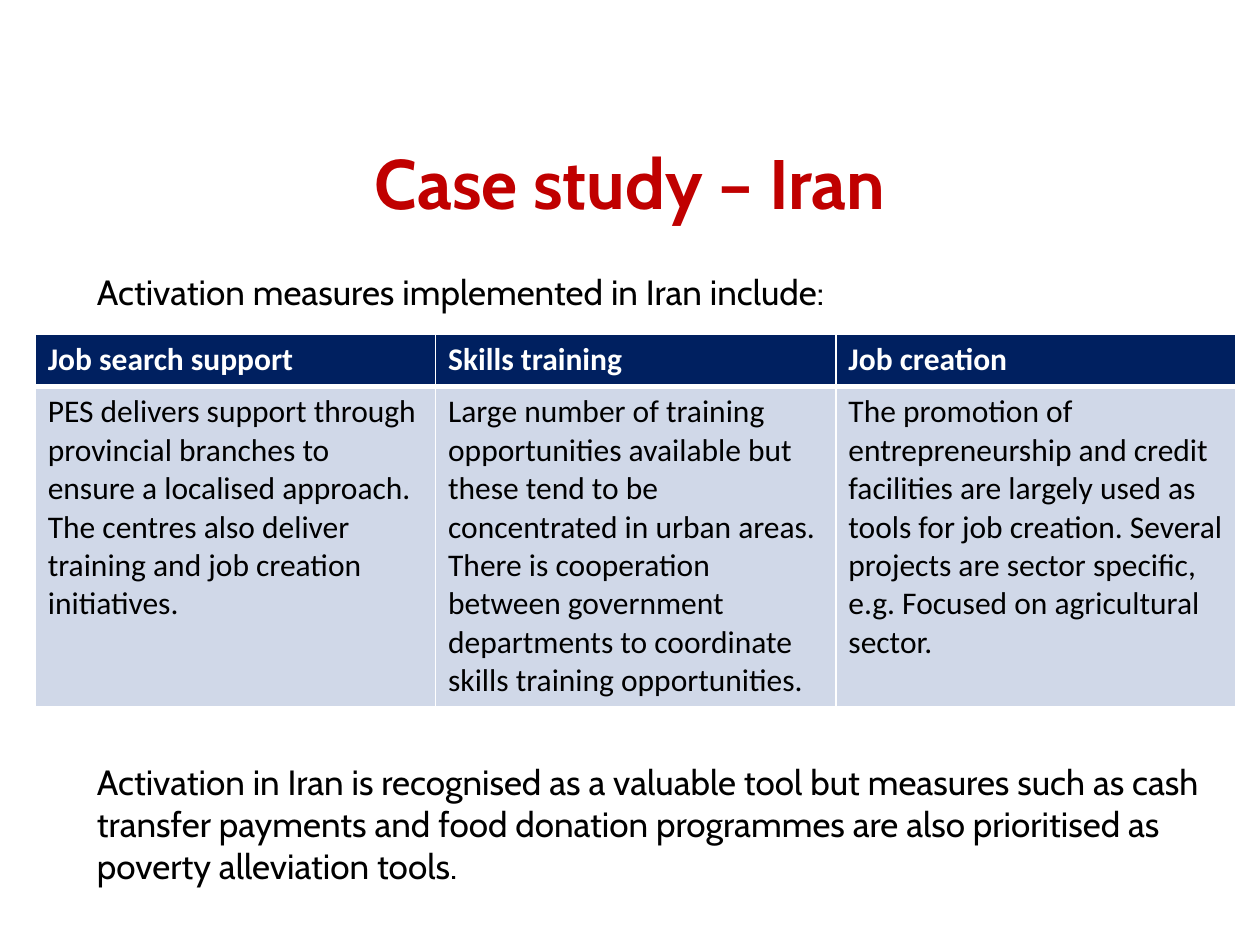
from pptx import Presentation
from pptx.dml.color import RGBColor
from pptx.enum.text import MSO_ANCHOR as Anchor, MSO_AUTO_SIZE as Fit, PP_ALIGN as Align
from pptx.oxml.ns import qn
from pptx.util import Cm, Pt
from lxml.etree import SubElement as Sub

HEADS = ["Job search support", "Skills training", "Job creation"]
CELLS = [
    "PES delivers support through provincial branches to ensure a localised approach. "
    "The centres also deliver training and job creation initiatives.",
    "Large number of training opportunities available but these tend to be concentrated "
    "in urban areas. There is cooperation between government departments to coordinate "
    "skills training opportunities.",
    "The promotion of entrepreneurship and credit facilities are largely used as tools for "
    "job creation. Several projects are sector specific, e.g. Focused on agricultural sector.",
]
INTRO = "Activation measures implemented in Iran include:"
CLOSE = ("Activation in Iran is recognised as a valuable tool but measures such as cash transfer "
         "payments and food donation programmes are also prioritised as poverty alleviation tools.")


def color(code):
    return RGBColor.from_string(code)


class Deck:
    """Holds the style and the current slide, and adds each kind of element."""

    red, navy, pale, white, black = "C00000", "002060", "D0D8E8", "FFFFFF", "000000"
    font, grid = "Cabin", "Calibri"

    def __init__(self):
        self.prs = Presentation()
        self.prs.slide_width, self.prs.slide_height = Cm(25.4), Cm(19.05)
        self.slide = self.prs.slides.add_slide(self.prs.slide_layouts[1])

    def place(self, shape, box):
        shape.left, shape.top, shape.width, shape.height = map(Cm, box)
        frame = shape.text_frame
        frame.word_wrap, frame.auto_size = True, Fit.NONE
        return frame

    def add_text(self, para, text, size, tint, bold=False, face=None):
        run = para.add_run()
        run.text = text
        font = run.font
        font.name, font.size, font.bold = face or self.font, Pt(size), bold
        font.color.rgb = color(tint)

    def title(self, text, box):
        frame = self.place(self.slide.shapes.title, box)
        frame.vertical_anchor = Anchor.MIDDLE
        para = frame.paragraphs[0]
        para.alignment = Align.CENTER
        self.add_text(para, text, 40, self.red, True)

    def body(self, texts, box, gap):
        frame = self.place(self.slide.placeholders[1], box)
        frame.vertical_anchor = Anchor.TOP
        for i, text in enumerate(texts):
            para = frame.add_paragraph() if i else frame.paragraphs[0]
            props = para._p.get_or_add_pPr()
            props.set("marL", "0")
            props.set("indent", "0")
            Sub(props, qn("a:buNone"))
            para.space_before = Pt(gap if i else 0)
            self.add_text(para, text, 20, self.black)

    def edge(self, cell, sides):
        props = cell._tc.get_or_add_tcPr()
        for side, width in sides.items():
            line = Sub(props, qn(f"a:ln{side}"), w=str(Pt(width)))
            Sub(Sub(line, qn("a:solidFill")), qn("a:srgbClr"), val=self.white)

    def table(self, rows, spot, wide, highs):
        size = (wide * len(rows[0]), sum(highs))
        table = self.slide.shapes.add_table(
            len(rows), len(rows[0]), *map(Cm, spot + size)).table
        for col in table.columns:
            col.width = Cm(wide)
        for r, row in enumerate(rows):
            table.rows[r].height = Cm(highs[r])
            head = r == 0
            for c, text in enumerate(row):
                cell = table.cell(r, c)
                self.edge(cell, {"L": 1, "R": 1, "T": 1 if head else 3, "B": 3 if head else 1})
                cell.fill.solid()
                cell.fill.fore_color.rgb = color(self.navy if head else self.pale)
                self.add_text(cell.text_frame.paragraphs[0], text, 18,
                              self.white if head else self.black, head, self.grid)


def main():
    deck = Deck()
    deck.title("Case study – Iran", (1.9, 1.75, 21.6, 3.8))
    deck.body([INTRO, CLOSE], (1.7, 5.33, 22.86, 9.47), 256)
    deck.table([HEADS, CELLS], (0.71, 6.73), 8.07, (1.06, 6.44))
    deck.prs.save("out.pptx")


if __name__ == "__main__":
    main()
